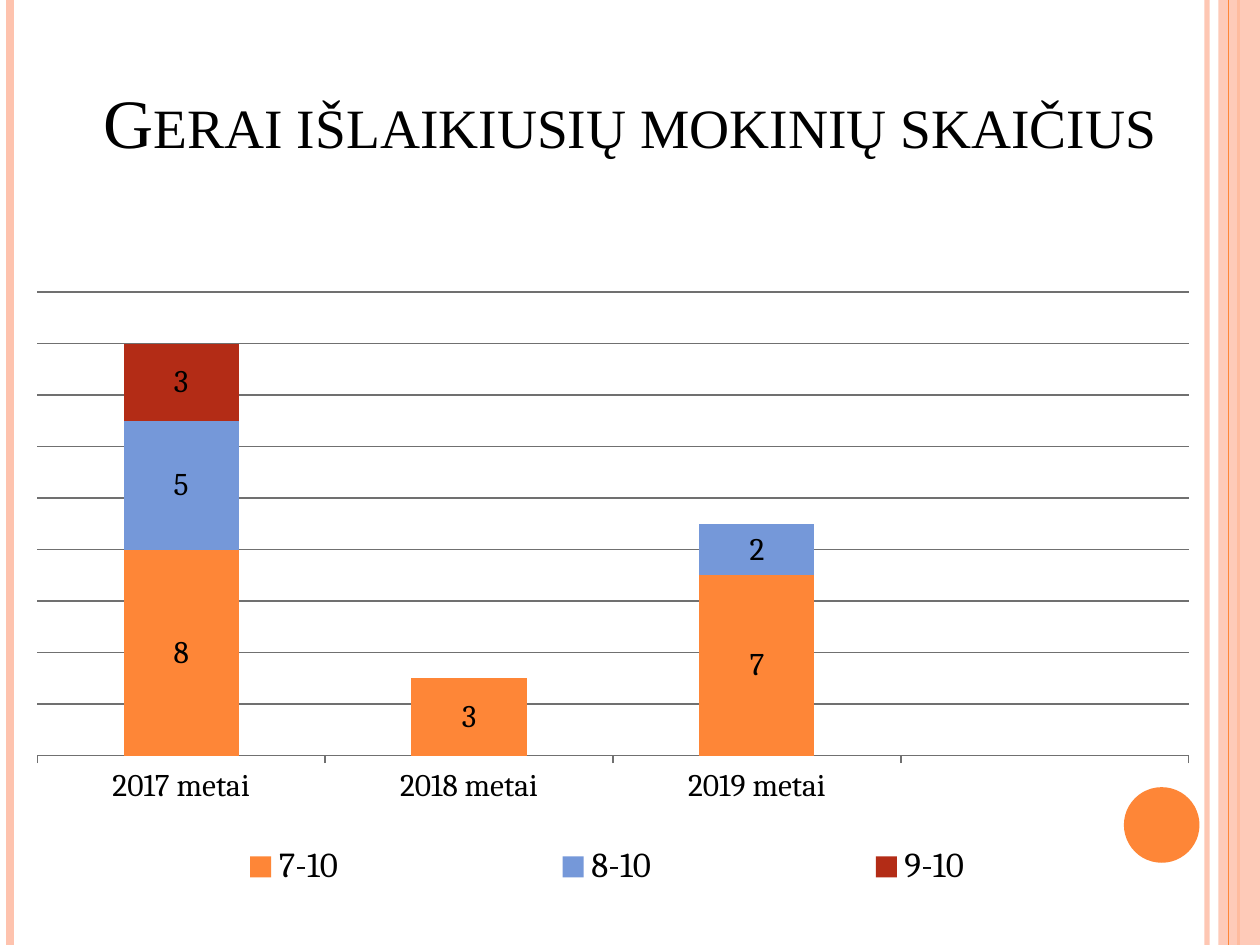
from lxml import etree
from pptx import Presentation
from pptx.chart.data import CategoryChartData
from pptx.dml.color import RGBColor
from pptx.enum.chart import XL_CHART_TYPE, XL_LEGEND_POSITION, XL_TICK_MARK
from pptx.enum.shapes import MSO_CONNECTOR, MSO_SHAPE
from pptx.enum.text import MSO_ANCHOR, PP_ALIGN
from pptx.oxml.ns import qn
from pptx.util import Inches, Pt

STACKED = XL_CHART_TYPE.COLUMN_STACKED
BOTTOM = XL_LEGEND_POSITION.BOTTOM
TICK_OUT, TICK_NONE = XL_TICK_MARK.OUTSIDE, XL_TICK_MARK.NONE
STRAIGHT = MSO_CONNECTOR.STRAIGHT
RECTANGLE, OVAL = MSO_SHAPE.RECTANGLE, MSO_SHAPE.OVAL
ANCHOR_BOTTOM, CENTER = MSO_ANCHOR.BOTTOM, PP_ALIGN.CENTER

WIDTH, HEIGHT = 10, 7.5
TITLE_ONLY = 5
COLORS = {"orange": "FE8637", "peach": "FEC3AE", "blue": "7598D9",
          "red": "B32C16", "text": "000000", "grid": "707070"}
TITLE_FONT, CHART_FONT = "Times New Roman", "Cambria"


def rgb(name):
    return RGBColor.from_string(COLORS[name])


def set_alpha(fill_parent, percent):
    color = next(fill_parent.iter(qn("a:srgbClr")))
    etree.SubElement(color, qn("a:alpha"), val=str(percent * 1000))


def set_layout(element, tag_before, **values):
    """Give a chart part a manual layout, as shares of the chart."""
    for old in element.findall(qn("c:layout")):
        element.remove(old)
    layout = etree.Element(qn("c:layout"))
    manual = etree.SubElement(layout, qn("c:manualLayout"))
    for key, value in values.items():
        etree.SubElement(manual, qn("c:" + key), val=str(value))
    before = element.find(qn(tag_before)) if tag_before else None
    if before is None:
        element.insert(0, layout)
    else:
        before.addnext(layout)


class SlideBuilder:
    def __init__(self):
        self.deck = Presentation()
        self.deck.slide_width = Inches(WIDTH)
        self.deck.slide_height = Inches(HEIGHT)
        self.page = self.deck.slides.add_slide(self.deck.slide_layouts[TITLE_ONLY])

    def area(self, left, top, width, height):
        """Turn shares of the slide into lengths."""
        return (Inches(left * WIDTH), Inches(top * HEIGHT),
                Inches(width * WIDTH), Inches(height * HEIGHT))

    def title(self, text, size, *shares):
        box = self.page.shapes.title
        box.left, box.top, box.width, box.height = self.area(*shares)
        box.text_frame.vertical_anchor = ANCHOR_BOTTOM
        para = box.text_frame.paragraphs[0]
        para.alignment = CENTER
        span = para.add_run()
        span.text = text
        span.font.name, span.font.size = TITLE_FONT, Pt(size)
        span.font.color.rgb = rgb("text")
        span.font._element.set("cap", "small")

    def stripe(self, x, color, weight, alpha=None):
        left, top, _, bottom = self.area(x, 0, 0, 1)
        line = self.page.shapes.add_connector(STRAIGHT, left, top, left, bottom)
        line.line.color.rgb = rgb(color)
        line.line.width = Pt(weight)
        properties = line._element.spPr
        etree.SubElement(properties, qn("a:effectLst"))
        if alpha:
            set_alpha(properties, alpha)

    def shape(self, kind, color, *shares, alpha=None):
        shape = self.page.shapes.add_shape(kind, *self.area(*shares))
        shape.shadow.inherit = False
        shape.fill.solid()
        shape.fill.fore_color.rgb = rgb(color)
        shape.line.fill.background()
        if alpha:
            set_alpha(shape._element.spPr, alpha)

    def stacked_chart(self, categories, series, *shares):
        data = CategoryChartData()
        data.categories = categories
        for name, values, _ in series:
            data.add_series(name, values)
        chart = self.page.shapes.add_chart(STACKED, *self.area(*shares), data).chart
        chart.has_title = False
        chart.font.name, chart.font.size = CHART_FONT, Pt(18)
        chart.font.color.rgb = rgb("text")

        # Columns and their values
        plot = chart.plots[0]
        plot.gap_width, plot.overlap = 150, 100
        plot.vary_by_categories = False
        for column, (_, _, color) in zip(plot.series, series):
            column.format.fill.solid()
            column.format.fill.fore_color.rgb = rgb(color)
            column.data_labels.show_value = True

        # Axes
        chart.category_axis.major_tick_mark = TICK_OUT
        chart.category_axis.minor_tick_mark = TICK_NONE
        value_axis = chart.value_axis
        value_axis.visible = False
        value_axis.minimum_scale, value_axis.maximum_scale = 0, 18
        value_axis.major_unit = 2
        value_axis.has_major_gridlines = True
        for part in (chart.category_axis, value_axis.major_gridlines):
            part.format.line.color.rgb = rgb("grid")
            part.format.line.width = Pt(0.75)

        # Legend and layout
        chart.has_legend = True
        legend = chart.legend
        legend.position = BOTTOM
        legend.include_in_layout = False
        legend.font.name, legend.font.size = CHART_FONT, Pt(20)
        legend.font.color.rgb = rgb("text")
        set_layout(legend._element, "c:legendPos", xMode="edge", yMode="edge",
                   x=0, y=0.88, w=0.99, h=0.11)
        set_layout(chart._chartSpace.chart.plotArea, None, layoutTarget="inner",
                   xMode="edge", yMode="edge", x=0, y=0.03, w=1, h=0.73)


def main():
    slide = SlideBuilder()

    # Side stripes and circle
    slide.stripe(0.958, "peach", 3, alpha=93)
    slide.stripe(0.008, "peach", 4.5)
    slide.stripe(0.983, "orange", 1.5)
    slide.shape(RECTANGLE, "peach", 0.967, 0, 0.033, 1, alpha=87)
    slide.stripe(0.975, "orange", 0.75)
    slide.shape(OVAL, "orange", 0.892, 0.833, 0.06, 0.08)

    slide.title("Gerai išlaikiusių mokinių skaičius", 39.6,
                0.031, 0.073, 0.938, 0.105)

    # Pupils by grade range; the last column stays empty
    slide.stacked_chart(
        ["2017 metai", "2018 metai", "2019 metai", ""],
        [("7-10", (8, 3, 7, None), "orange"),
         ("8-10", (5, None, 2, None), "blue"),
         ("9-10", (3, None, None, None), "red")],
        0.029, 0.289, 0.915, 0.672)

    slide.deck.save("out.pptx")


if __name__ == "__main__":
    main()
